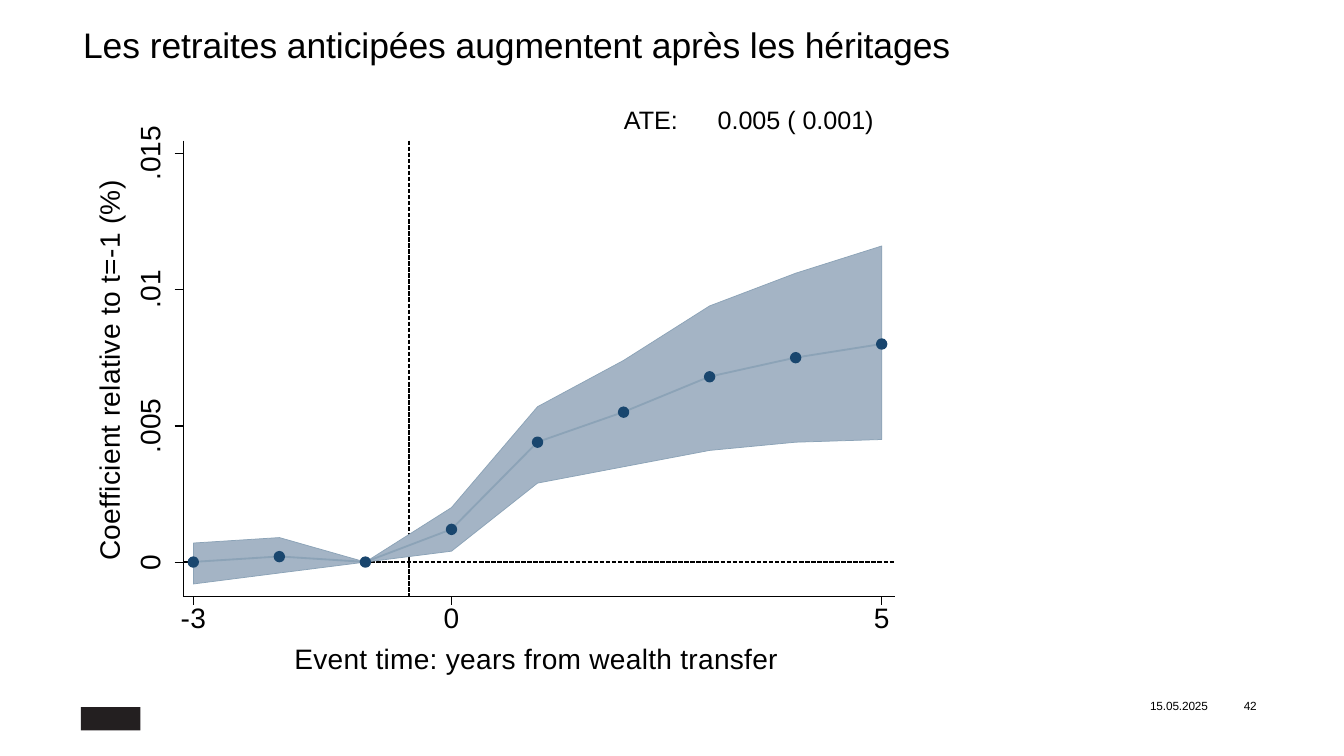
"""Build the slide on early retirement after inheritances."""
import pptx
import pptx.chart.data
import pptx.dml.color
import pptx.enum.chart
import pptx.enum.dml
import pptx.enum.shapes
import pptx.enum.text
import pptx.oxml
import pptx.oxml.ns
import pptx.util
from pptx.util import Inches

COLORS = {"ink": "000000", "band": "A4B4C5", "edge": "8CA3B7", "dot": "19466E", "mark": "231F20"}
RGB = {name: pptx.dml.color.RGBColor.from_string(code) for name, code in COLORS.items()}
ALIGN = pptx.enum.text.PP_ALIGN
FRAME = {
    "margin_left": 0, "margin_right": 0, "margin_top": 0, "margin_bottom": 0,
    "word_wrap": True, "auto_size": pptx.enum.text.MSO_AUTO_SIZE.NONE,
    "vertical_anchor": pptx.enum.text.MSO_ANCHOR.MIDDLE,
}
NS = pptx.oxml.ns.nsdecls("a", "c")

deck = pptx.Presentation()
deck.slide_width, deck.slide_height = Inches(6.31), Inches(3.55)
slide = deck.slides.add_slide(deck.slide_layouts[5])
shapes = slide.shapes


def write(shape, text, size, gap, align, tab=None):
    """Fill a shape with one styled line of text."""
    frame = shape.text_frame
    for key, value in FRAME.items():
        setattr(frame, key, value)
    line = frame.paragraphs[0]
    line.alignment = align
    run = line.add_run()
    run.text = text
    look = {"name": "Arial", "size": pptx.util.Pt(size), "bold": False}
    for key, value in look.items():
        setattr(run.font, key, value)
    run.font.color.rgb = RGB["ink"]
    run.font._element.set("spc", str(gap))
    if tab:
        stops = f'<a:tabLst {NS}><a:tab pos="{Inches(tab)}" algn="l"/></a:tabLst>'
        line._p.get_or_add_pPr().append(pptx.oxml.parse_xml(stops))


def rule(x1, y1, x2, y2, width, dash=None):
    """Draw a straight line."""
    line = shapes.add_connector(
        pptx.enum.shapes.MSO_CONNECTOR.STRAIGHT, Inches(x1), Inches(y1), Inches(x2), Inches(y2))
    line.line.color.rgb = RGB["ink"]
    line.line.width = pptx.util.Pt(width)
    if dash:
        line.line.dash_style = dash
    line._element.spPr.append(pptx.oxml.parse_xml(f"<a:effectLst {NS}/>"))


title = shapes.title
for key, value in {"left": 0.39, "top": 0.1, "width": 4.6, "height": 0.22}.items():
    setattr(title, key, Inches(value))
write(title, "Les retraites anticipées augmentent après les héritages", 12, -4, ALIGN.LEFT)

years = range(-3, 6)
coefs = [0, 0.2, 0, 1.2, 4.4, 5.5, 6.8, 7.5, 8]
highs = [0.7, 0.9, 0, 2, 5.7, 7.4, 9.4, 10.6, 11.6]
lows = [-0.8, -0.4, 0, 0.4, 2.9, 3.5, 4.1, 4.4, 4.5]
left, top, right, base = 0.86, 0.66, 4.2, 2.8
zero, start = 2.64, 2.12
step, rise = 0.404, 0.128

dash = pptx.enum.dml.MSO_LINE.SQUARE_DOT
rule(1.92, top, 1.92, base, 0.5, dash)
rule(left, zero, right, zero, 0.5, dash)

rim = list(zip(years, highs)) + list(zip(years, lows))[::-1]
spots = [(Inches(start + t * step), Inches(zero - v * rise)) for t, v in rim]
pen = shapes.build_freeform(*spots[0])
pen.add_line_segments(spots[1:], close=True)
band = pen.convert_to_shape()
band.shadow.inherit = False
band.fill.solid()
band.fill.fore_color.rgb = RGB["band"]
band.line.color.rgb = RGB["edge"]
band.line.width = pptx.util.Pt(0.25)

data = pptx.chart.data.XyChartData()
series = data.add_series("Coefficient relative to t=-1 (%)")
for year, coef in zip(years, coefs):
    series.add_data_point(year, coef / 1000)
chart = shapes.add_chart(
    pptx.enum.chart.XL_CHART_TYPE.XY_SCATTER_LINES_NO_MARKERS, Inches(left), Inches(top),
    Inches(right - left), Inches(base - top), data).chart
chart.has_legend = chart.has_title = False
chart.font.name, chart.font.size = "Arial", pptx.util.Pt(9.5)
chart.font.color.rgb = RGB["ink"]
chart.plots[0].vary_by_categories = False
spans = [
    (chart.category_axis, (left - start) / step, (right - start) / step),
    (chart.value_axis, (zero - base) / rise / 1000, (zero - top) / rise / 1000),
]
for axis, low, high in spans:
    look = {"minimum_scale": round(low, 5), "maximum_scale": round(high, 5),
            "has_major_gridlines": False, "visible": False}
    for key, value in look.items():
        setattr(axis, key, value)
trend = chart.plots[0].series[0]
trend.smooth = False
trend.format.line.color.rgb = RGB["edge"]
trend.format.line.width = pptx.util.Pt(0.61)

space = chart._chartSpace
plot = space.chart.plotArea
for old in plot.findall(pptx.oxml.ns.qn("c:layout")):
    plot.remove(old)
sides = "".join(f'<c:{k} val="{v}"/>' for k, v in [
    ("layoutTarget", "inner"), ("xMode", "edge"), ("yMode", "edge"),
    ("x", 0), ("y", 0), ("w", 1), ("h", 1)])
plot.insert(0, pptx.oxml.parse_xml(
    f"<c:layout {NS}><c:manualLayout>{sides}</c:manualLayout></c:layout>"))
clear = f"<c:spPr {NS}><a:noFill/><a:ln><a:noFill/></a:ln></c:spPr>"
plot.append(pptx.oxml.parse_xml(clear))
space.chart.addnext(pptx.oxml.parse_xml(clear))

size = 0.045
for year, coef in zip(years, coefs):
    x, y = start + year * step, zero - coef * rise
    dot = shapes.add_shape(
        pptx.enum.shapes.MSO_SHAPE.OVAL, Inches(x - size / 2), Inches(y - size / 2),
        Inches(size), Inches(size))
    dot.shadow.inherit = False
    dot.fill.solid()
    dot.fill.fore_color.rgb = dot.line.color.rgb = RGB["dot"]
    dot.line.width = pptx.util.Pt(0.61)

rule(left, top, left, base, 0.4)
rule(left, base, right, base, 0.4)
labels = [
    ("Coefficient relative to t=-1 (%)", 0.51, 1.74, 10, True),
    ("Event time: years from wealth transfer", 2.52, 3.09, 10, False),
]
for count, text in enumerate(["0", ".005", ".01", ".015"]):
    y = zero - count * 5 * rise
    rule(left - 0.04, y, left, y, 0.4)
    labels.append((text, 0.7, y, -4, True))
for year in (-3, 0, 5):
    x = start + year * step
    rule(x, base, x, base + 0.04, 0.4)
    labels.append((str(year), x, 2.9, 10, False))
for text, x, y, gap, turned in labels:
    long = 2.6 if len(text) > 4 else 0.4
    wide, tall = (0.18, long) if turned else (long, 0.18)
    box = shapes.add_textbox(
        Inches(x - wide / 2), Inches(y - tall / 2), Inches(wide), Inches(tall))
    write(box, text, 9.5, gap, ALIGN.CENTER)
    if turned:
        box.text_frame._txBody.bodyPr.set("vert", "vert270")

notes = [
    ("ATE:\t0.005 ( 0.001)", 2.93, 0.48, 1.4, 0.16, 8.5),
    ("15.05.2025\t42", 5.4, 3.27, 0.6, 0.09, 4),
]
for text, x, y, wide, tall, size in notes:
    box = shapes.add_textbox(Inches(x), Inches(y), Inches(wide), Inches(tall))
    write(box, text, size, -4, ALIGN.LEFT, 0.44)

mark = shapes.add_shape(
    pptx.enum.shapes.MSO_SHAPE.RECTANGLE, Inches(0.38), Inches(3.32), Inches(0.28), Inches(0.11))
mark.shadow.inherit = False
mark.fill.solid()
mark.fill.fore_color.rgb = RGB["mark"]
mark.line.fill.background()

deck.save("out.pptx")
